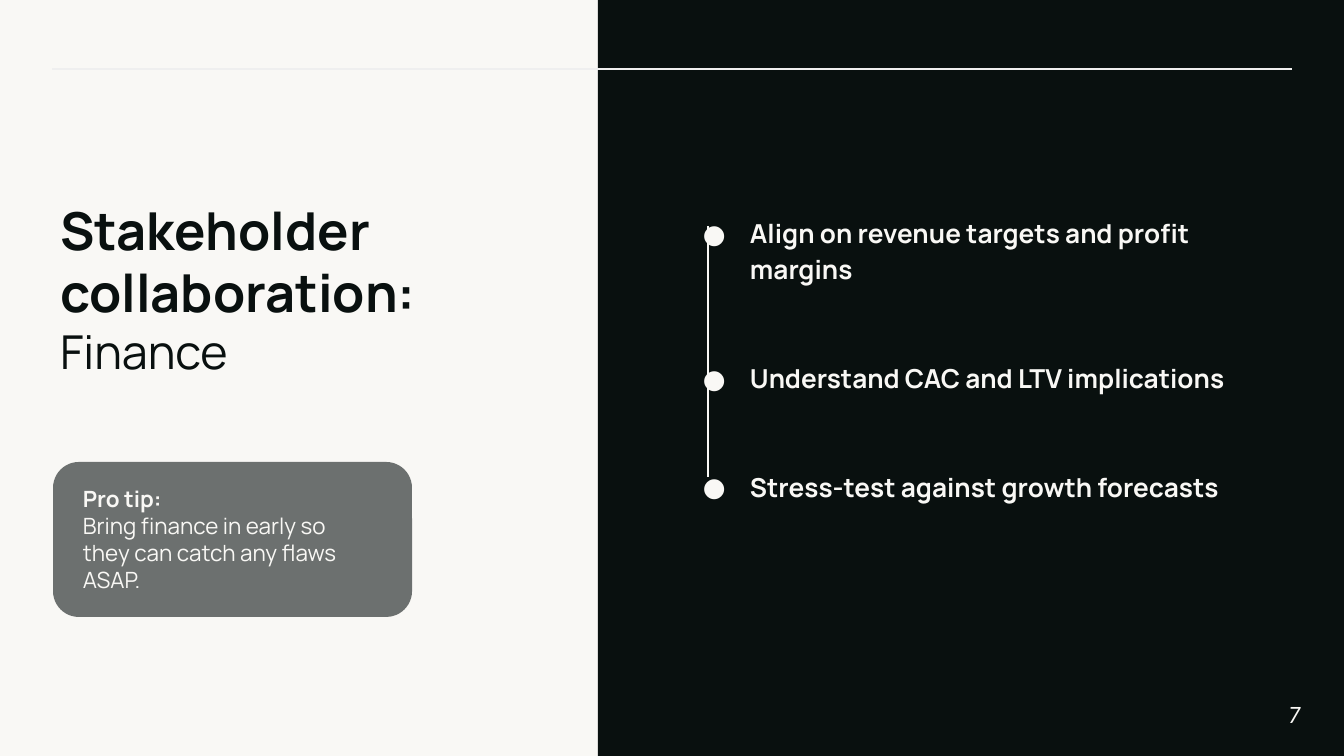
"""Build the finance stakeholder collaboration slide."""
from lxml import etree
from pptx import Presentation
from pptx.dml.color import RGBColor
from pptx.enum.shapes import MSO_CONNECTOR, MSO_SHAPE
from pptx.enum.text import MSO_ANCHOR, MSO_AUTO_SIZE, PP_ALIGN
from pptx.oxml.ns import qn
from pptx.util import Pt

PX = 914400 / 134.4
RECT, ROUNDED = MSO_SHAPE.RECTANGLE, MSO_SHAPE.ROUNDED_RECTANGLE
STRAIGHT = MSO_CONNECTOR.STRAIGHT
TOP, MIDDLE = MSO_ANCHOR.TOP, MSO_ANCHOR.MIDDLE
LEFT, RIGHT = PP_ALIGN.LEFT, PP_ALIGN.RIGHT
NO_FIT = MSO_AUTO_SIZE.NONE

CREAM = RGBColor(0xF9, 0xF8, 0xF5)
INK = RGBColor(0x09, 0x10, 0x0F)
GRAY = RGBColor(0x6C, 0x70, 0x6F)
PALE = RGBColor(0xEF, 0xEF, 0xEF)


def px(*lengths):
    return [round(n * PX) for n in lengths]


def set_text(sp, runs_by_paragraph, color, anchor=MIDDLE, inset=0, align=LEFT, font="Manrope"):
    tf = sp.text_frame
    tf.word_wrap = True
    tf.auto_size = NO_FIT
    tf.vertical_anchor = anchor
    tf.margin_left, tf.margin_top, tf.margin_right, tf.margin_bottom = px(*[inset] * 4)
    for i, runs in enumerate(runs_by_paragraph):
        p = tf.add_paragraph() if i else tf.paragraphs[0]
        p.alignment = align
        for text, size, bold in runs:
            r = p.add_run()
            r.text = text
            r.font.name = font
            r.font.size = Pt(size)
            r.font.bold = bold
            r.font.color.rgb = color
    return tf


prs = Presentation()
prs.slide_width, prs.slide_height = px(1344, 756)
s = prs.slides.add_slide(prs.slide_layouts[5])
s.background.fill.solid()
s.background.fill.fore_color.rgb = CREAM

for kind, box, color in [
    (RECT, (598, 0, 746, 756), INK),
    (ROUNDED, (53, 462, 359, 155), GRAY),
]:
    sp = s.shapes.add_shape(kind, *px(*box))
    sp.shadow.inherit = False
    sp.fill.solid()
    sp.fill.fore_color.rgb = color
    sp.line.fill.background()

for ends, color in [
    ((1292, 69, 52, 69), PALE),
    ((708, 226, 708, 477), CREAM),
]:
    line = s.shapes.add_connector(STRAIGHT, *px(*ends))
    line.line.color.rgb = color
    line.line.width = Pt(0.75)
    etree.SubElement(line._element.spPr, qn("a:effectLst"))

title = s.shapes.title
title.left, title.top, title.width, title.height = px(60, 205, 399, 167)
tf = set_text(title, [[("Stakeholder collaboration: ", 28, True), ("Finance", 25, False)]], INK)
tf.paragraphs[0].space_after = Pt(10)

points = [
    "Align on revenue targets and profit margins",
    "Understand CAC and LTV implications",
    "Stress-test against growth forecasts",
]
body = s.shapes.add_textbox(*px(683, 213, 581, 336))
tf = set_text(body, [[(point, 14, True)] for point in points], CREAM, anchor=TOP)
for p in tf.paragraphs:
    p.line_spacing = 1.15
    p.space_after = Pt(39)
    pPr = p._p.get_or_add_pPr()
    indent, hanging = px(67, -47)
    pPr.set("marL", str(indent))
    pPr.set("indent", str(hanging))
    bullet_color = etree.SubElement(pPr, qn("a:buClr"))
    etree.SubElement(bullet_color, qn("a:srgbClr"), val=str(CREAM))
    etree.SubElement(pPr, qn("a:buFont"), typeface="Manrope")
    etree.SubElement(pPr, qn("a:buChar"), char="●")

tip = s.shapes.add_textbox(*px(70, 472, 314, 132))
set_text(tip, [
    [("Pro tip:", 12, True)],
    [("Bring finance in early so they can catch any flaws ASAP.", 12, False)],
], CREAM, anchor=TOP, inset=13)

number = s.shapes.add_textbox(*px(1220, 686, 81, 58))
tf = set_text(number, [[("7", 12, False)]], CREAM, align=RIGHT, font="Lato")
tf.paragraphs[0].runs[0].font.italic = True

prs.save("out.pptx")
